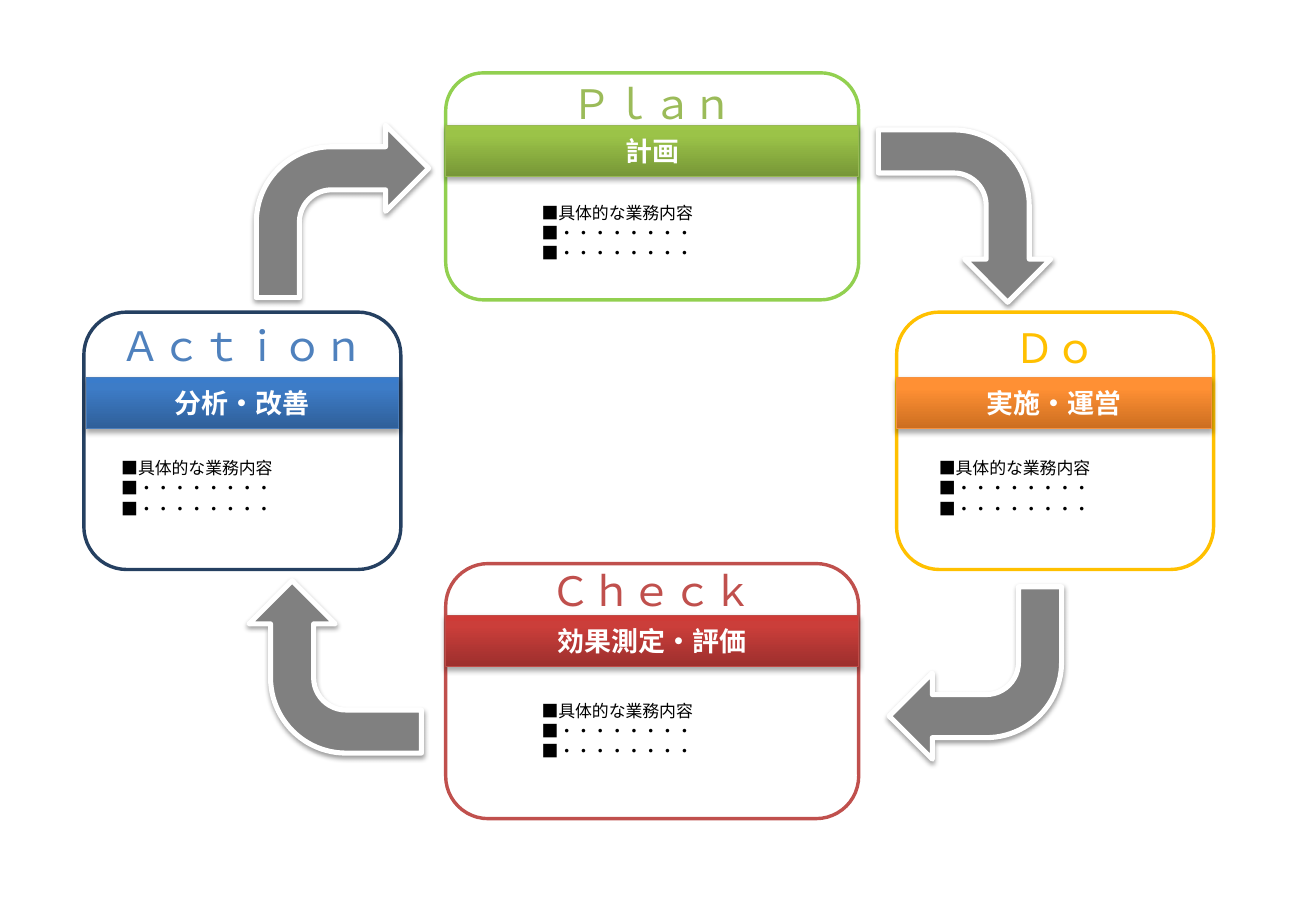
from copy import deepcopy
from dataclasses import dataclass

from lxml.etree import SubElement
from pptx import Presentation
from pptx.dml.color import RGBColor
from pptx.enum.shapes import MSO_SHAPE as Preset
from pptx.enum.text import MSO_ANCHOR as Anchor
from pptx.enum.text import MSO_AUTO_SIZE as AutoSize
from pptx.enum.text import PP_ALIGN as Align
from pptx.oxml.ns import qn
from pptx.shapes.autoshape import Shape
from pptx.shapes.shapetree import SlideShapes
from pptx.text.text import TextFrame
from pptx.util import Pt

FONT = "Noto Sans CJK JP"
WHITE = RGBColor(0xFF, 0xFF, 0xFF)
BLACK = RGBColor(0x00, 0x00, 0x00)
GRAY = RGBColor(0x80, 0x80, 0x80)
LIME = RGBColor(0x92, 0xD0, 0x50)
GREEN = RGBColor(0x9B, 0xBB, 0x59)
RED = RGBColor(0xC0, 0x50, 0x4D)
NAVY = RGBColor(0x25, 0x40, 0x61)
BLUE = RGBColor(0x4F, 0x81, 0xBD)
GOLD = RGBColor(0xFF, 0xC0, 0x00)
GREEN_EDGE = RGBColor(0x98, 0xB9, 0x55)
RED_EDGE = RGBColor(0xBF, 0x4C, 0x48)
BLUE_EDGE = RGBColor(0x4B, 0x7E, 0xBC)
ORANGE_EDGE = RGBColor(0xF6, 0x92, 0x40)
GREEN_BAND = (RGBColor(0x77, 0x97, 0x37), RGBColor(0x9B, 0xC3, 0x48), RGBColor(0x9D, 0xC7, 0x46))
RED_BAND = (RGBColor(0x9C, 0x2F, 0x2D), RGBColor(0xCB, 0x3E, 0x3A), RGBColor(0xCE, 0x3B, 0x37))
BLUE_BAND = (RGBColor(0x2F, 0x5F, 0x99), RGBColor(0x3D, 0x7C, 0xC7), RGBColor(0x3A, 0x7C, 0xCB))
ORANGE_BAND = (RGBColor(0xCC, 0x6E, 0x20), RGBColor(0xFF, 0x90, 0x34), RGBColor(0xFF, 0x91, 0x36))

BAND_STOPS = (0, 0.8, 1)
BAND_HEIGHT = 30.2
TITLE_HEIGHT = 36
TASKS_WIDTH, TASKS_HEIGHT = 146.2, 43.9
ARROW_SIZE = 102.2
LINE_PITCH = 1.2
TASKS = ("■具体的な業務内容", "■・・・・・・・・", "■・・・・・・・・")


@dataclass(frozen=True)
class Box:
    left: float
    top: float
    width: float
    height: float


@dataclass(frozen=True)
class Stage:
    title: str
    subtitle: str
    card: Box
    band: Box
    title_top: float
    tasks_left: float
    tasks_top: float
    outline: RGBColor
    title_color: RGBColor
    band_colors: tuple[RGBColor, ...]
    band_edge: RGBColor


@dataclass(frozen=True)
class Arrow:
    left: float
    top: float
    rotation: int


STAGES = (
    Stage("Ｐｌａｎ", "計画", Box(264.2, 43.2, 244.8, 134.6),
          Box(264.2, 74.2, 244.8, BAND_HEIGHT), 43.2, 313.9, 116.6,
          LIME, GREEN, GREEN_BAND, GREEN_EDGE),
    Stage("Ｃｈｅｃｋ", "効果測定・評価", Box(264.2, 334.1, 244.8, 151.2),
          Box(264.2, 365, 244.8, BAND_HEIGHT), 331.9, 313.9, 411.8,
          RED, RED, RED_BAND, RED_EDGE),
    Stage("Ｄｏ", "実施・運営", Box(531.4, 185, 187.9, 152.6),
          Box(531.4, 223.9, 186.5, BAND_HEIGHT), 187.9, 549.4, 267.8,
          GOLD, GOLD, ORANGE_BAND, ORANGE_EDGE),
    Stage("Ａｃｔｉｏｎ", "分析・改善", Box(49.7, 185, 187.9, 152.6),
          Box(51.1, 223.9, 185, BAND_HEIGHT), 186.5, 64.8, 267.8,
          NAVY, BLUE, BLUE_BAND, BLUE_EDGE),
)
ARROWS = (
    Arrow(151.9, 74.2, 0),
    Arrow(520.6, 77, 90),
    Arrow(527, 347.8, 180),
    Arrow(147.6, 344.2, 270),
)


def add_preset(shapes: SlideShapes, preset: Preset, box: Box,
               edge: RGBColor, edge_width: float) -> Shape:
    shape = shapes.add_shape(preset, Pt(box.left), Pt(box.top), Pt(box.width), Pt(box.height))
    shape.shadow.inherit = False
    shape.line.color.rgb = edge
    shape.line.width = Pt(edge_width)
    return shape


def drop_shadow(shape: Shape, distance: float, opacity: int) -> None:
    effects = shape._element.spPr.find(qn("a:effectLst"))
    shadow = SubElement(effects, qn("a:outerShdw"), blurRad=str(Pt(3.1)),
                        dist=str(Pt(distance)), dir="5400000", rotWithShape="0")
    color = SubElement(shadow, qn("a:srgbClr"), val=str(BLACK))
    SubElement(color, qn("a:alpha"), val=str(opacity * 1000))


def fill_gradient(shape: Shape, colors: tuple[RGBColor, ...]) -> None:
    """Fill from the bottom edge upwards with three colours."""
    shape.fill.gradient()
    shape.fill.gradient_angle = 90
    stops = next(shape._element.spPr.iter(qn("a:gsLst")))
    stops.append(deepcopy(stops[-1]))
    for stop, position, color in zip(shape.fill.gradient_stops, BAND_STOPS, colors):
        stop.position = position
        stop.color.rgb = color


def write_lines(frame: TextFrame, lines: tuple[str, ...], size: float, color: RGBColor,
                align: Align, bold: bool = False, pitch: float | None = None) -> None:
    frame.word_wrap = True
    for index, line in enumerate(lines):
        paragraph = frame.add_paragraph() if index else frame.paragraphs[0]
        paragraph.alignment = align
        if pitch:
            paragraph.line_spacing = Pt(size * pitch)
        run = paragraph.add_run()
        run.text = line
        run.font.name = FONT
        run.font.size = Pt(size)
        run.font.bold = bold
        run.font.color.rgb = color
        SubElement(run.font._element, qn("a:ea"), typeface=FONT)


def add_text(shapes: SlideShapes, box: Box, lines: tuple[str, ...], size: float,
             color: RGBColor, align: Align) -> None:
    frame = shapes.add_textbox(Pt(box.left), Pt(box.top), Pt(box.width), Pt(box.height)).text_frame
    write_lines(frame, lines, size, color, align, pitch=LINE_PITCH)
    frame.auto_size = AutoSize.SHAPE_TO_FIT_TEXT


def add_arrow(shapes: SlideShapes, arrow: Arrow) -> None:
    box = Box(arrow.left, arrow.top, ARROW_SIZE, ARROW_SIZE)
    bend = add_preset(shapes, Preset.BENT_ARROW, box, WHITE, 3)
    bend.rotation = arrow.rotation
    bend.fill.solid()
    bend.fill.fore_color.rgb = GRAY
    drop_shadow(bend, 1.6, 38)


def add_stage(shapes: SlideShapes, stage: Stage) -> None:
    card = add_preset(shapes, Preset.ROUNDED_RECTANGLE, stage.card, stage.outline, 2)
    card.fill.solid()
    card.fill.fore_color.rgb = WHITE

    band = add_preset(shapes, Preset.ROUNDED_RECTANGLE, stage.band, stage.band_edge, 0.75)
    band.adjustments[0] = 0
    fill_gradient(band, stage.band_colors)
    drop_shadow(band, 1.8, 35)
    band.text_frame.vertical_anchor = Anchor.MIDDLE
    write_lines(band.text_frame, (stage.subtitle,), 16, WHITE, Align.CENTER, bold=True)

    title_box = Box(stage.card.left, stage.title_top, stage.card.width, TITLE_HEIGHT)
    add_text(shapes, title_box, (stage.title,), 24, stage.title_color, Align.CENTER)
    tasks_box = Box(stage.tasks_left, stage.tasks_top, TASKS_WIDTH, TASKS_HEIGHT)
    add_text(shapes, tasks_box, TASKS, 10, BLACK, Align.LEFT)


def main() -> None:
    deck = Presentation()
    deck.slide_width, deck.slide_height = Pt(780), Pt(540)
    shapes = deck.slides.add_slide(deck.slide_layouts[6]).shapes
    for arrow in ARROWS:
        add_arrow(shapes, arrow)
    for stage in STAGES:
        add_stage(shapes, stage)
    deck.save("out.pptx")


if __name__ == "__main__":
    main()
